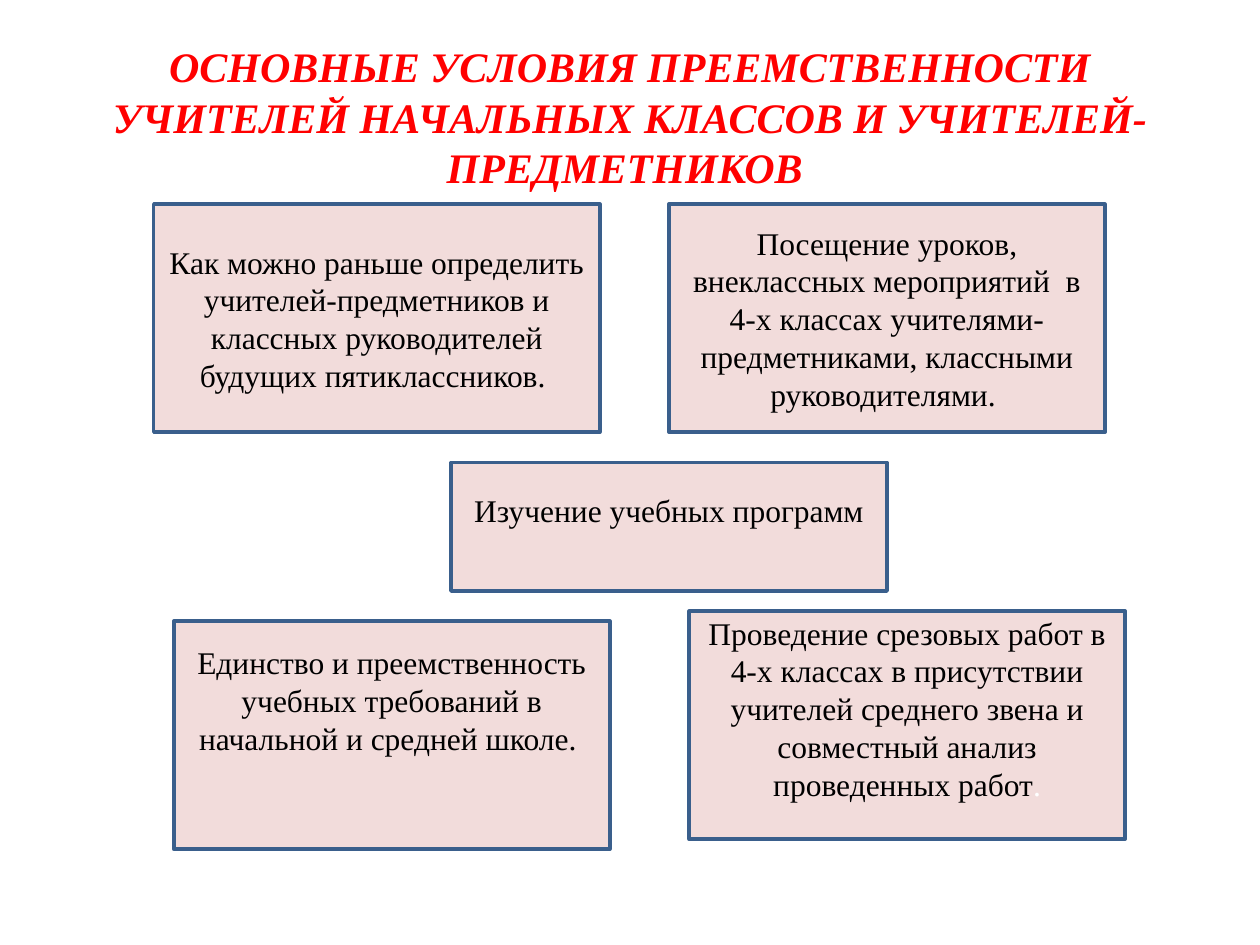
import pptx
import pptx.util
from pptx.dml.color import RGBColor
from pptx.enum.shapes import MSO_SHAPE
from pptx.enum.text import MSO_ANCHOR, PP_ALIGN

RED = RGBColor(0xFF, 0x00, 0x00)
BLACK = RGBColor(0x00, 0x00, 0x00)
WHITE = RGBColor(0xFF, 0xFF, 0xFF)
PINK = RGBColor(0xF2, 0xDC, 0xDB)
BLUE = RGBColor(0x3A, 0x5F, 0x8C)

COLUMNS, ROWS = 100, 75
BOX_WIDTH, BOX_HEIGHT = 34.6, 18.1


class ConditionsSlide:
    font_name = "Times New Roman"
    title_size = pptx.util.Pt(24)
    body_size = pptx.util.Pt(18)
    outline = pptx.util.Pt(2)

    def __init__(self, deck):
        self.column = deck.slide_width / COLUMNS
        self.row = deck.slide_height / ROWS
        self.slide = deck.slides.add_slide(deck.slide_layouts[5])

    def place(self, left, top, width, height):
        return (round(left * self.column), round(top * self.row),
                round(width * self.column), round(height * self.row))

    def style(self, paragraph, size, color):
        paragraph.alignment = PP_ALIGN.CENTER
        paragraph.font.name = self.font_name
        paragraph.font.size = size
        paragraph.font.color.rgb = color

    def title(self, wording, left, top, width, height):
        heading = self.slide.shapes.title
        heading.left, heading.top, heading.width, heading.height = self.place(
            left, top, width, height)
        frame = heading.text_frame
        frame.text = wording
        frame.word_wrap = True
        frame.vertical_anchor = MSO_ANCHOR.MIDDLE
        paragraph = frame.paragraphs[0]
        self.style(paragraph, self.title_size, RED)
        paragraph.font.bold = True
        paragraph.font.italic = True

    def condition(self, wording, left, top, width=BOX_WIDTH, height=BOX_HEIGHT,
                  inset_top=0.5, inset_bottom=0.5):
        box = self.slide.shapes.add_shape(
            MSO_SHAPE.FLOWCHART_PROCESS, *self.place(left, top, width, height))
        box.shadow.inherit = False
        box.fill.solid()
        box.fill.fore_color.rgb = PINK
        box.line.color.rgb = BLUE
        box.line.width = self.outline
        frame = box.text_frame
        frame.word_wrap = True
        frame.vertical_anchor = MSO_ANCHOR.MIDDLE
        frame.margin_top = round(inset_top * self.row)
        frame.margin_bottom = round(inset_bottom * self.row)
        frame.text = wording
        self.style(frame.paragraphs[0], self.body_size, BLACK)
        return frame.paragraphs[0]


def main():
    deck = pptx.Presentation()
    deck.slide_width = pptx.util.Inches(10)
    deck.slide_height = pptx.util.Inches(7.5)
    page = ConditionsSlide(deck)

    page.title("ОСНОВНЫЕ УСЛОВИЯ ПРЕЕМСТВЕННОСТИ УЧИТЕЛЕЙ НАЧАЛЬНЫХ КЛАССОВ "
               "И УЧИТЕЛЕЙ-ПРЕДМЕТНИКОВ ", 5, 3, 90, 12.5)
    page.condition("Как можно раньше определить учителей-предметников и классных "
                   "руководителей будущих пятиклассников. ", 12.2, 16.2, width=35.4)
    page.condition("Посещение уроков, внеклассных мероприятий  в 4-х классах "
                   "учителями-предметниками, классными руководителями. ", 53.1, 16.2)
    page.condition("Изучение учебных программ", 35.8, 36.7, height=10.2,
                   inset_bottom=3.2)
    page.condition("Единство и преемственность учебных требований в начальной "
                   "и средней школе. ", 13.8, 49.3, inset_bottom=6.1)
    tests = page.condition("Проведение срезовых работ в 4-х классах в присутствии "
                           "учителей среднего звена и совместный анализ "
                           "проведенных работ", 54.7, 48.5,
                           inset_top=0, inset_bottom=2.7)
    full_stop = tests.add_run()
    full_stop.text = "."
    full_stop.font.color.rgb = WHITE

    deck.save("out.pptx")


if __name__ == "__main__":
    main()
